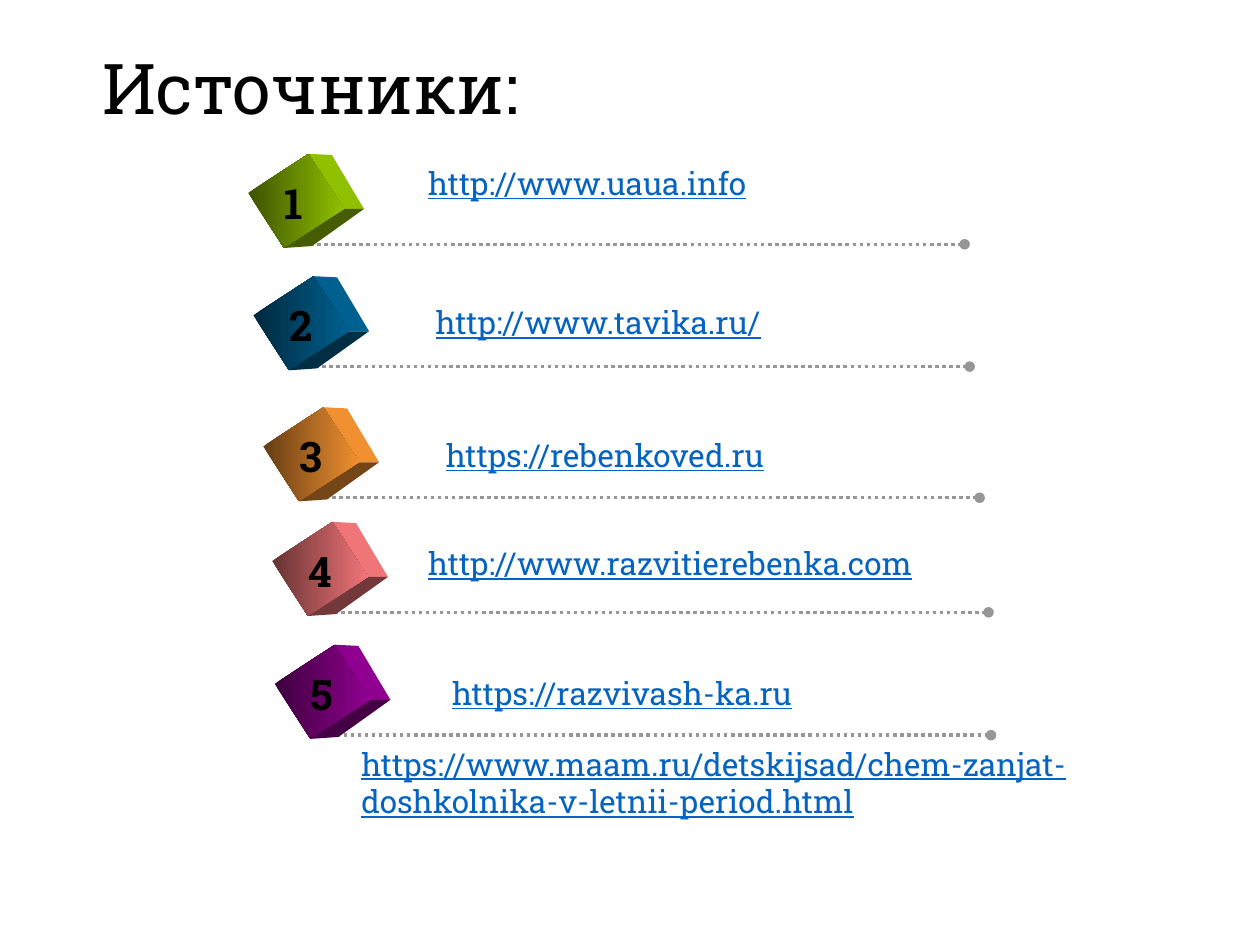
import pptx
import pptx.dml.color
import pptx.enum.dml
import pptx.enum.shapes
import pptx.enum.text
import pptx.oxml
import pptx.oxml.ns
import pptx.util

Pt = pptx.util.Pt
RGBColor = pptx.dml.color.RGBColor

BLACK = RGBColor(0x00, 0x00, 0x00)
LINK_BLUE = RGBColor(0x05, 0x63, 0xC1)
RULE_GRAY = RGBColor(0x96, 0x96, 0x96)
GREEN = RGBColor(0x99, 0xCC, 0x00)
BLUE = RGBColor(0x00, 0x66, 0x99)
ORANGE = RGBColor(0xFF, 0x99, 0x33)
PINK = RGBColor(0xFF, 0x7C, 0x80)
PURPLE = RGBColor(0x99, 0x00, 0x99)

SOURCES = [
    ("http://www.uaua.info", GREEN, (169.2, 114.8), (237.6, 90), 212.4),
    ("http://www.tavika.ru/", BLUE, (172.1, 184.7), (241.9, 169.9), 218.9),
    ("https://rebenkoved.ru", ORANGE, (177.8, 259.6), (247.7, 245.5), 216.7),
    ("http://www.razvitierebenka.com", PINK, (182.9, 325.1), (237.6, 307.4), 306),
    ("https://razvivash-ka.ru", PURPLE, (184.3, 395.3), (251.3, 381.6), 227.5),
]
LAST_SOURCE = "https://www.maam.ru/detskijsad/chem-zanjat-doshkolnika-v-letnii-period.html"

FACE_WIDTH, FACE_HEIGHT, FACE_TURN = 37.4, 41, 57
RIGHT_SIDE = [(6.9, -26.9), (20.5, -26.2), (38.8, 4.6), (27.4, 4.6)]
UNDERSIDE = [(-6.9, 26.9), (27.4, 4.6), (38.8, 4.6), (9.1, 25.8)]


def shade(color, factor):
    return RGBColor(*(round(channel * factor) for channel in color))


class SourcesSlide:
    font_name = "Roboto Slab"

    def __init__(self, presentation):
        self.slide = presentation.slides.add_slide(presentation.slide_layouts[5])
        self.shapes = self.slide.shapes

    def add_run(self, paragraph, text, size, color, bold=False, underline=False):
        run = paragraph.add_run()
        run.text = text
        run.font.name = self.font_name
        run.font.size = Pt(size)
        run.font.bold = bold
        run.font.underline = underline
        run.font.color.rgb = color

    def title(self, text, left, top, width, height):
        heading = self.shapes.title
        heading.left, heading.top = Pt(left), Pt(top)
        heading.width, heading.height = Pt(width), Pt(height)
        heading.text_frame.vertical_anchor = pptx.enum.text.MSO_ANCHOR.MIDDLE
        paragraph = heading.text_frame.paragraphs[0]
        paragraph.alignment = pptx.enum.text.PP_ALIGN.LEFT
        paragraph.line_spacing = 0.9
        self.add_run(paragraph, text, 40, BLACK)

    def text(self, text, left, top, width, height, size, color, wrap=False, **style):
        label = self.shapes.add_textbox(Pt(left), Pt(top), Pt(width), Pt(height))
        label.text_frame.word_wrap = wrap
        self.add_run(label.text_frame.paragraphs[0], text, size, color, **style)

    def link(self, address, left, top, width, height=28.8, wrap=False):
        self.text(address, left, top, width, height, 18, LINK_BLUE, wrap, underline=True)

    def dotted_rule(self, left, top, length):
        rule = self.shapes.add_connector(
            pptx.enum.shapes.MSO_CONNECTOR.STRAIGHT,
            Pt(left), Pt(top), Pt(left + length), Pt(top))
        rule.line.color.rgb = RULE_GRAY
        rule.line.width = Pt(2)
        rule.line.dash_style = pptx.enum.dml.MSO_LINE.ROUND_DOT
        properties = rule._element.spPr
        tail = pptx.oxml.parse_xml(
            f'<a:tailEnd {pptx.oxml.ns.nsdecls("a")} type="oval"/>')
        rule.line._get_or_add_ln().append(tail)
        properties.append(pptx.oxml.parse_xml(
            f'<a:effectLst {pptx.oxml.ns.nsdecls("a")}/>'))

    def side(self, center, corners, color):
        x, y = center
        points = [(Pt(x + dx), Pt(y + dy)) for dx, dy in corners]
        builder = self.shapes.build_freeform(*points[0], scale=1.0)
        builder.add_line_segments(points[1:], close=True)
        face = builder.convert_to_shape()
        face.shadow.inherit = False
        face.fill.solid()
        face.fill.fore_color.rgb = color
        face.line.fill.background()

    def cube(self, center, color):
        x, y = center
        self.side(center, RIGHT_SIDE, shade(color, 0.94))
        self.side(center, UNDERSIDE, shade(color, 0.45))
        front = self.shapes.add_shape(
            pptx.enum.shapes.MSO_SHAPE.RECTANGLE,
            Pt(x - FACE_WIDTH / 2), Pt(y - FACE_HEIGHT / 2),
            Pt(FACE_WIDTH), Pt(FACE_HEIGHT))
        front.rotation = FACE_TURN
        front.shadow.inherit = False
        front.line.fill.background()
        front.fill.gradient()
        front.fill.gradient_angle = FACE_TURN
        for stop, factor in zip(front.fill.gradient_stops, (0.4, 0.94)):
            stop.color.rgb = shade(color, factor)

    def numbered_source(self, number, address, color, center, link_at, link_width):
        x, y = center
        self.dotted_rule(x + 4, y + 24.8, 378)
        self.cube(center, color)
        self.text(str(number), x - 13.7, y - 17, 26.6, 36.7, 24, BLACK, bold=True)
        self.link(address, *link_at, link_width)


def main():
    presentation = pptx.Presentation()
    presentation.slide_width, presentation.slide_height = Pt(720), Pt(540)
    sources = SourcesSlide(presentation)
    sources.title("Источники:", 51.1, 13, 619.9, 78.5)
    for number, source in enumerate(SOURCES, start=1):
        sources.numbered_source(number, *source)
    sources.link(LAST_SOURCE, 199.4, 421.9, 498.2, 51.1, wrap=True)
    presentation.save("out.pptx")


if __name__ == "__main__":
    main()
